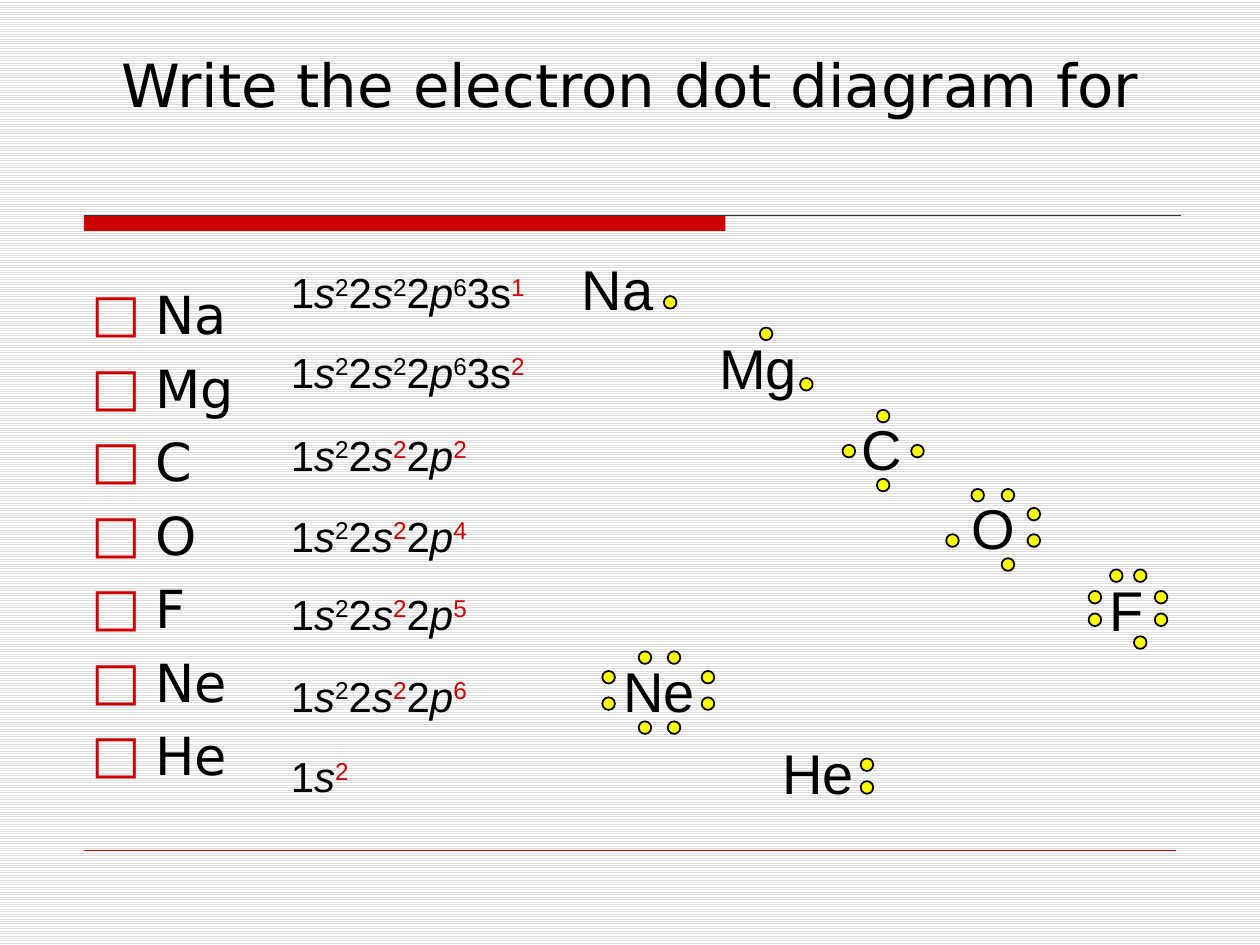
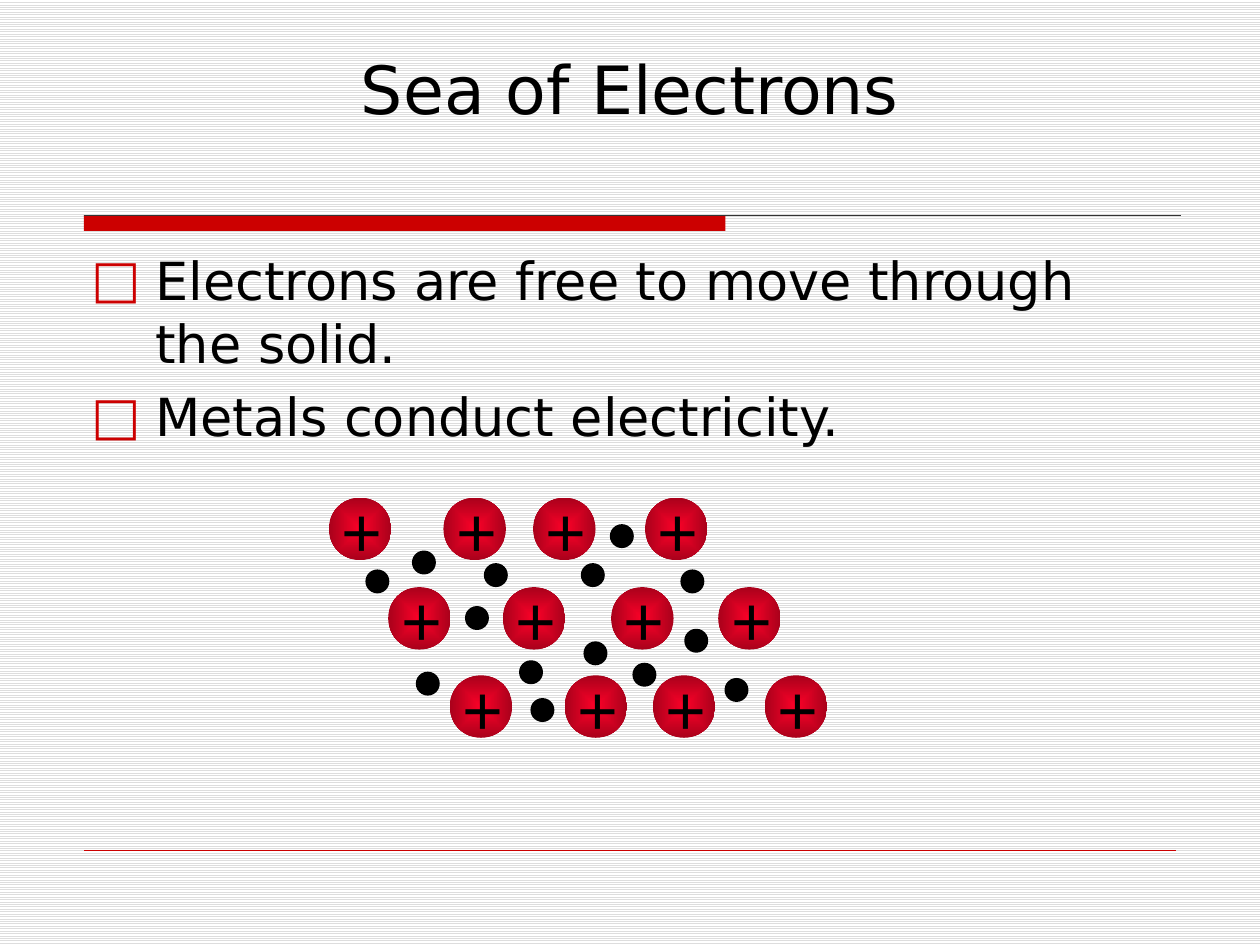
"""Builds two chemistry slides: electron dot diagrams and the sea of electrons."""
from itertools import product

from lxml.etree import SubElement
from pptx import Presentation
from pptx.dml.color import RGBColor
from pptx.enum.dml import MSO_PATTERN
from pptx.enum.shapes import MSO_CONNECTOR, MSO_SHAPE
from pptx.enum.text import MSO_AUTO_SIZE, PP_ALIGN
from pptx.oxml.ns import qn
from pptx.util import Pt

COLORS = {
    "ink": "000000",
    "accent": "CC0000",
    "rule": "333333",
    "stripe": "DDDDDD",
    "paper": "FFFFFF",
    "dot": "FAFD00",
    "ion_core": "FC0128",
    "ion_edge": "A9011B",
}
HEADING_FONT, LABEL_FONT = "DejaVu Sans", "Arial"
DOT_SIZE, ION_SIZE, ELECTRON_SIZE = 7.2, 35.7, 13.7
MARGIN, CONTENT_WIDTH = 45, 630

ELEMENTS = [
    ("Na", "1s2 2s2 2p6 3s1", 149, 152.6, (325.4, 141.8, 55.4),
     [((379.4,), (169.2,))]),
    ("Mg", "1s2 2s2 2p6 3s2", 194.4, 152.6, (403.9, 187.2, 59),
     [((457.2,), (216,)), ((434.2,), (187.2,))]),
    ("C", "1s2 2s2 2p2", 241.9, 118.8, (485.3, 233.3, 37.4),
     [((481.5, 520.7), (254.2,)), ((501.1,), (234.2, 273.6))]),
    ("O", "1s2 2s2 2p4", 288, 118.8, (547.9, 278.6, 39.6),
     [((587.2,), (290.2, 305.3)), ((555.1, 572.4), (279.4,)),
      ((572.4,), (319,)), ((540.7,), (305.3,))]),
    ("F", "1s2 2s2 2p5", 332.6, 118.8, (627.1, 325.4, 33.8),
     [((622.1, 659.9), (337.7, 350.6)), ((634.3, 648), (325.4,)),
      ((648,), (363.6,))]),
    ("Ne", "1s2 2s2 2p6", 379.4, 118.8, (349.2, 371.5, 55.4),
     [((344.2, 401), (383.4, 398.5)), ((365, 381.6), (372.2, 412.2))]),
    ("He", "1s2", 425.5, 49, (439.9, 418.3, 55.4),
     [((491.8,), (433.4, 446.4))]),
]
ION_ROWS = {
    284.4: (187.9, 253.4, 304.6, 368.6),
    335.5: (221.8, 287.3, 349.2, 410.4),
    385.9: (257, 322.6, 373, 437),
}
ELECTRONS = [
    (331.9, 321.8), (235.4, 314.6), (237.6, 383.8), (265.7, 346.3),
    (276.5, 321.8), (303.1, 398.9), (414, 387.4), (333.4, 366.5),
    (361.4, 378.7), (391, 359.3), (388.8, 325.4), (348.5, 299.5),
    (208.8, 325.4), (296.6, 377.3),
]


def rgb(name):
    return RGBColor.from_string(COLORS[name])


class Deck:
    def __init__(self):
        self.prs = Presentation()
        self.prs.slide_width, self.prs.slide_height = Pt(720), Pt(540)
        self.slide = None

    def new_slide(self, title, size, height):
        self.slide = self.prs.slides.add_slide(self.prs.slide_layouts[6])
        backdrop = self.slide.background.fill
        backdrop.patterned()
        backdrop.pattern = MSO_PATTERN.LIGHT_HORIZONTAL
        backdrop.fore_color.rgb = rgb("stripe")
        backdrop.back_color.rgb = rgb("paper")
        self.shape(MSO_SHAPE.RECTANGLE, 48, 123, 366.5, 9, "accent")
        self.line(48, 675, 123, "rule", 0.75)
        self.line(48, 672, 486, "accent", 0.25)
        heading = self.text_box(MARGIN, 24, CONTENT_WIDTH, height)
        heading.paragraphs[0].alignment = PP_ALIGN.CENTER
        self.run(heading.paragraphs[0], title, size, HEADING_FONT)

    def line(self, start, end, y, color, width):
        rule = self.slide.shapes.add_connector(
            MSO_CONNECTOR.STRAIGHT, Pt(start), Pt(y), Pt(end), Pt(y))
        rule.line.color.rgb = rgb(color)
        rule.line.width = Pt(width)
        SubElement(rule._element.spPr, qn("a:effectLst"))

    def shape(self, kind, left, top, width, height, color, outline=None):
        shape = self.slide.shapes.add_shape(
            kind, Pt(left), Pt(top), Pt(width), Pt(height))
        shape.shadow.inherit = False
        shape.fill.solid()
        shape.fill.fore_color.rgb = rgb(color)
        if outline:
            shape.line.color.rgb = rgb(outline)
            shape.line.width = Pt(1)
        else:
            shape.line.fill.background()
        return shape

    def circle(self, left, top, size, color, outline=None):
        return self.shape(MSO_SHAPE.OVAL, left, top, size, size, color, outline)

    def text_box(self, left, top, width, height, wrap=True, grow=True):
        box = self.slide.shapes.add_textbox(
            Pt(left), Pt(top), Pt(width), Pt(height))
        frame = box.text_frame
        frame.word_wrap = wrap
        frame.auto_size = (MSO_AUTO_SIZE.SHAPE_TO_FIT_TEXT if grow
                           else MSO_AUTO_SIZE.NONE)
        return frame

    def run(self, paragraph, text, size, font=LABEL_FONT, color="ink",
            italic=False, raised=False):
        run = paragraph.add_run()
        run.text = text
        run.font.size = Pt(size)
        run.font.name = font
        run.font.color.rgb = rgb(color)
        if italic:
            run.font.italic = True
        if raised:
            run._r.get_or_add_rPr().set("baseline", "30000")

    def space_before(self, paragraph, percent):
        spacing = SubElement(paragraph._p.get_or_add_pPr(), qn("a:spcBef"))
        SubElement(spacing, qn("a:spcPct"), val=str(percent * 1000))

    def bullets(self, top, height, items):
        frame = self.text_box(MARGIN, top, CONTENT_WIDTH, height, grow=False)
        for index, item in enumerate(items):
            paragraph = frame.add_paragraph() if index else frame.paragraphs[0]
            self.space_before(paragraph, 20)
            props = paragraph._p.get_or_add_pPr()
            props.set("marL", str(Pt(36.72)))
            props.set("indent", str(-Pt(36.72)))
            SubElement(SubElement(props, qn("a:buClr")), qn("a:srgbClr"),
                       val=COLORS["accent"])
            SubElement(props, qn("a:buFont"), typeface=HEADING_FONT)
            SubElement(props, qn("a:buChar"), char="□")
            self.run(paragraph, item, 30, HEADING_FONT)

    def configuration(self, top, width, notation):
        paragraph = self.text_box(159.1, top, width, 36, wrap=False).paragraphs[0]
        terms = notation.split()
        outer_shell = terms[-1][0]
        for shell, orbital, count in terms:
            if shell == "3":
                self.run(paragraph, shell + orbital, 24)
            else:
                self.run(paragraph, shell, 24)
                self.run(paragraph, orbital, 24, italic=True)
            color = "accent" if shell == outer_shell else "ink"
            self.run(paragraph, count, 24, color=color, raised=True)

    def dot_diagram(self, symbol, place, dot_groups):
        label = self.text_box(*place, 45.4, wrap=False)
        self.run(label.paragraphs[0], symbol, 32)
        for xs, ys in dot_groups:
            for x, y in product(xs, ys):
                self.circle(x, y, DOT_SIZE, "dot", "ink")

    def ion(self, left, top):
        fill = self.circle(left, top, ION_SIZE, "ion_core").fill
        fill.gradient()
        for stop, color in zip(fill.gradient_stops, ("ion_core", "ion_edge")):
            stop.color.rgb = rgb(color)
        gradient = self.slide.shapes[-1]._element.spPr.find(qn("a:gradFill"))
        gradient.remove(gradient.find(qn("a:lin")))
        focus = SubElement(gradient, qn("a:path"), {"path": "shape"})
        SubElement(focus, qn("a:fillToRect"),
                   {side: "50000" for side in "ltrb"})
        charge = self.text_box(left + 0.3, top - 9.4, 23.8, 55.4).paragraphs[0]
        self.space_before(charge, 50)
        self.run(charge, "+", 40)


def main():
    deck = Deck()
    deck.new_slide("Write the electron dot diagram for", 34, 48.2)
    deck.bullets(157.7, 286.6, [element[0] for element in ELEMENTS])
    for symbol, notation, top, width, place, dot_groups in ELEMENTS:
        deck.configuration(top, width, notation)
        deck.dot_diagram(symbol, place, dot_groups)

    deck.new_slide("Sea of Electrons", 38, 52.6)
    for top, lefts in ION_ROWS.items():
        for left in lefts:
            deck.ion(left, top)
    for left, top in ELECTRONS:
        deck.circle(left, top, ELECTRON_SIZE, "ink")
    deck.bullets(138.2, 336.2, [
        "Electrons are free to move through the solid.",
        "Metals conduct electricity.",
    ])
    deck.prs.save("out.pptx")


if __name__ == "__main__":
    main()
